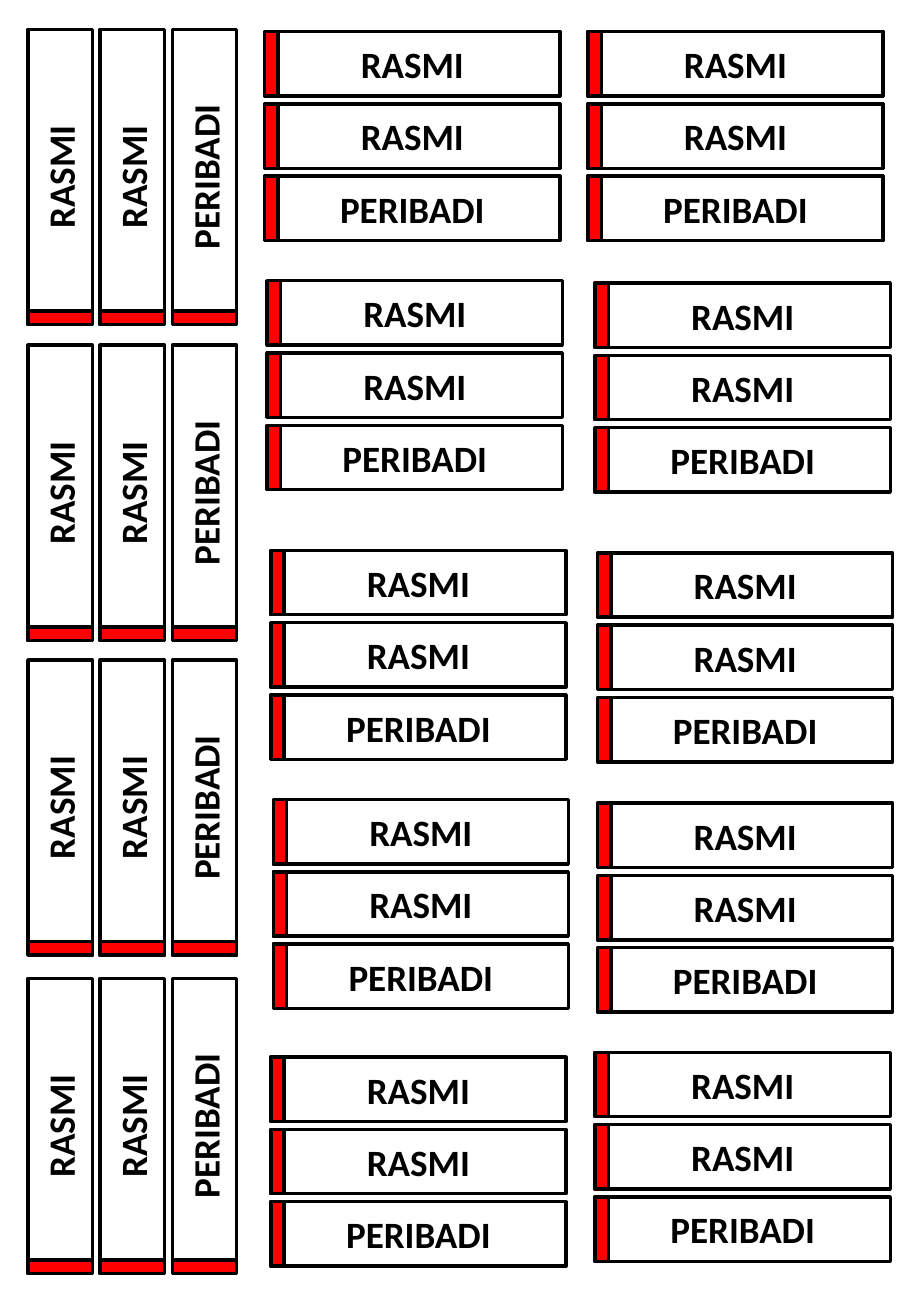
import pptx
import pptx.util
import pptx.dml.color
import pptx.enum.shapes
import pptx.enum.text

Inches = pptx.util.Inches
Pt = pptx.util.Pt

NAMES = ("RASMI", "RASMI", "PERIBADI")
LENGTH, DEPTH, STRIP = 2.43, 0.53, 0.11
PITCH = 1.19 / 2

UPRIGHT_LEFT = 0.23
UPRIGHT_TOPS = (0.24, 2.84, 5.43, 8.05)
FLAT_STACKS = (
    (2.18, 0.26), (4.84, 0.26),
    (2.2, 2.31), (4.9, 2.33),
    (2.23, 4.53), (4.92, 4.55),
    (2.25, 6.58), (4.92, 6.61),
    (2.23, 8.7), (4.9, 8.66),
)


def color(value):
    return pptx.dml.color.RGBColor.from_string(value)


class LabelSheet:
    font = "Calibri"
    size = 22
    ink = "000000"
    accent = "FF0000"
    line_width = 2

    def __init__(self, slide):
        self.slide = slide

    def box(self, group, cx, cy, width, rotation, fill=None):
        sp = group.shapes.add_shape(
            pptx.enum.shapes.MSO_SHAPE.RECTANGLE,
            Inches(cx - width / 2), Inches(cy - DEPTH / 2),
            Inches(width), Inches(DEPTH))
        sp.rotation = rotation
        sp.shadow.inherit = False
        if fill:
            sp.fill.solid()
            sp.fill.fore_color.rgb = color(fill)
        else:
            sp.fill.background()
        sp.line.color.rgb = color(self.ink)
        sp.line.width = Pt(self.line_width)
        return sp

    def label(self, group, text, left, top, upright):
        rotation = 270 if upright else 0
        if upright:
            cx, cy = left + DEPTH / 2, top + LENGTH / 2
            strip_x, strip_y = cx, top + LENGTH - STRIP / 2
        else:
            cx, cy = left + LENGTH / 2, top + DEPTH / 2
            strip_x, strip_y = left + STRIP / 2, cy
        tf = self.box(group, cx, cy, LENGTH, rotation).text_frame
        tf.word_wrap = True
        tf.vertical_anchor = pptx.enum.text.MSO_ANCHOR.MIDDLE
        p = tf.paragraphs[0]
        p.text = text
        p.alignment = pptx.enum.text.PP_ALIGN.CENTER
        p.font.name = self.font
        p.font.size = Pt(self.size)
        p.font.bold = True
        p.font.color.rgb = color(self.ink)
        self.box(group, strip_x, strip_y, STRIP, rotation, self.accent)

    def stack(self, left, top, upright=False):
        group = self.slide.shapes.add_group_shape()
        for i, name in enumerate(NAMES):
            step = i * PITCH
            if upright:
                self.label(group, name, left + step, top, upright)
            else:
                self.label(group, name, left, top + step, upright)


def main():
    prs = pptx.Presentation()
    prs.slide_width = Inches(7.5)
    prs.slide_height = Inches(10.83)
    sheet = LabelSheet(prs.slides.add_slide(prs.slide_layouts[6]))
    for top in UPRIGHT_TOPS:
        sheet.stack(UPRIGHT_LEFT, top, upright=True)
    for left, top in FLAT_STACKS:
        sheet.stack(left, top)
    prs.save("out.pptx")


if __name__ == "__main__":
    main()
